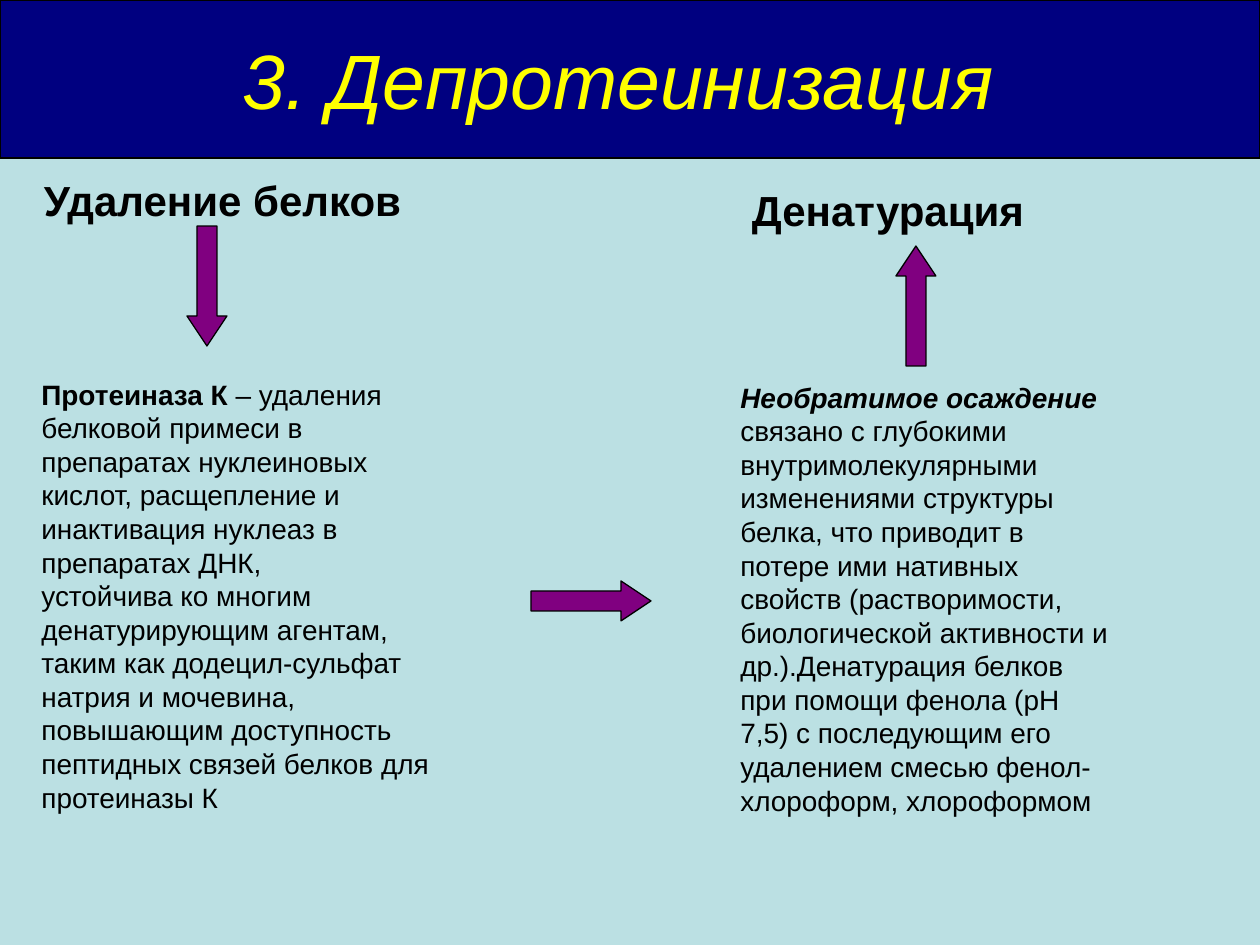
from dataclasses import dataclass

from pptx import Presentation
from pptx.dml.color import RGBColor
from pptx.enum.shapes import MSO_SHAPE
from pptx.enum.text import MSO_ANCHOR, MSO_AUTO_SIZE, PP_ALIGN
from pptx.util import Emu, Pt

PX = 914400 // 126


@dataclass(frozen=True)
class Theme:
    font: str = "Arial"
    background: str = "BBE0E3"
    band: str = "000080"
    title: str = "FFFF00"
    text: str = "000000"
    arrow: str = "800080"
    title_size: int = 44
    heading_size: int = 24
    body_size: int = 16
    line_width: float = 0.75


THEME = Theme()
TITLE = "3. Депротеинизация"
HEADINGS = [
    ("Удаление белков", (29, 168, 387, 63)),
    ("Денатурация", (738, 178, 300, 64)),
]
BODIES = [
    ((29, 371, 437, 454), [
        [("Протеиназа К", True, False),
         (" – удаления белковой примеси в препаратах нуклеиновых кислот, "
          "расщепление и инактивация нуклеаз в препаратах ДНК,", False, False)],
        [("устойчива ко многим денатурирующим агентам, таким как додецил-сульфат "
          "натрия и мочевина, повышающим доступность пептидных связей белков "
          "для протеиназы К", False, False)],
    ]),
    ((728, 374, 397, 451), [
        [("Необратимое осаждение", True, True),
         (" связано с глубокими внутримолекулярными изменениями структуры белка, "
          "что приводит в потере ими нативных свойств (растворимости, "
          "биологической активности и др.).Денатурация белков при помощи фенола "
          "(рН 7,5) с последующим его удалением смесью фенол-хлороформ, "
          "хлороформом", False, False)],
    ]),
]
ARROWS = [
    (MSO_SHAPE.DOWN_ARROW, (187, 226, 40, 120)),
    (MSO_SHAPE.RIGHT_ARROW, (531, 581, 120, 40)),
    (MSO_SHAPE.UP_ARROW, (896, 246, 40, 120)),
]


def emu(box):
    return [Emu(n * PX) for n in box]


def paint(sp, fill):
    sp.fill.solid()
    sp.fill.fore_color.rgb = RGBColor.from_string(fill)
    sp.line.color.rgb = RGBColor.from_string(THEME.text)
    sp.line.width = Pt(THEME.line_width)


def style(r, size, color=THEME.text, bold=False, italic=False):
    r.font.name = THEME.font
    r.font.size = Pt(size)
    r.font.bold = bold
    r.font.italic = italic
    r.font.color.rgb = RGBColor.from_string(color)


def add_title(s):
    sp = s.shapes.title
    sp.left, sp.top, sp.width, sp.height = emu((0, 0, 1260, 158))
    paint(sp, THEME.band)
    tf = sp.text_frame
    tf.text = TITLE
    tf.auto_size = MSO_AUTO_SIZE.NONE
    tf.vertical_anchor = MSO_ANCHOR.MIDDLE
    tf.margin_right = Emu(35 * PX)
    p = tf.paragraphs[0]
    p.alignment = PP_ALIGN.CENTER
    style(p.runs[0], THEME.title_size, THEME.title, italic=True)


def add_text(s, box, paragraphs, size, align, wrap):
    tf = s.shapes.add_textbox(*emu(box)).text_frame
    tf.word_wrap = wrap
    for i, runs in enumerate(paragraphs):
        p = tf.add_paragraph() if i else tf.paragraphs[0]
        p.alignment = align
        for text, bold, italic in runs:
            r = p.add_run()
            r.text = text
            style(r, size, bold=bold, italic=italic)


def add_arrow(s, kind, box):
    sp = s.shapes.add_shape(kind, *emu(box))
    sp.shadow.inherit = False
    sp.adjustments[0] = 0.5
    sp.adjustments[1] = 0.75
    paint(sp, THEME.arrow)


def main():
    prs = Presentation()
    prs.slide_width, prs.slide_height = emu((1260, 945))
    s = prs.slides.add_slide(prs.slide_layouts[5])
    s.background.fill.solid()
    s.background.fill.fore_color.rgb = RGBColor.from_string(THEME.background)
    add_title(s)
    for text, box in HEADINGS:
        add_text(s, box, [[(text, True, False)]], THEME.heading_size, PP_ALIGN.CENTER, False)
    for box, paragraphs in BODIES:
        add_text(s, box, paragraphs, THEME.body_size, PP_ALIGN.LEFT, True)
    for kind, box in ARROWS:
        add_arrow(s, kind, box)
    prs.save("out.pptx")


if __name__ == "__main__":
    main()
